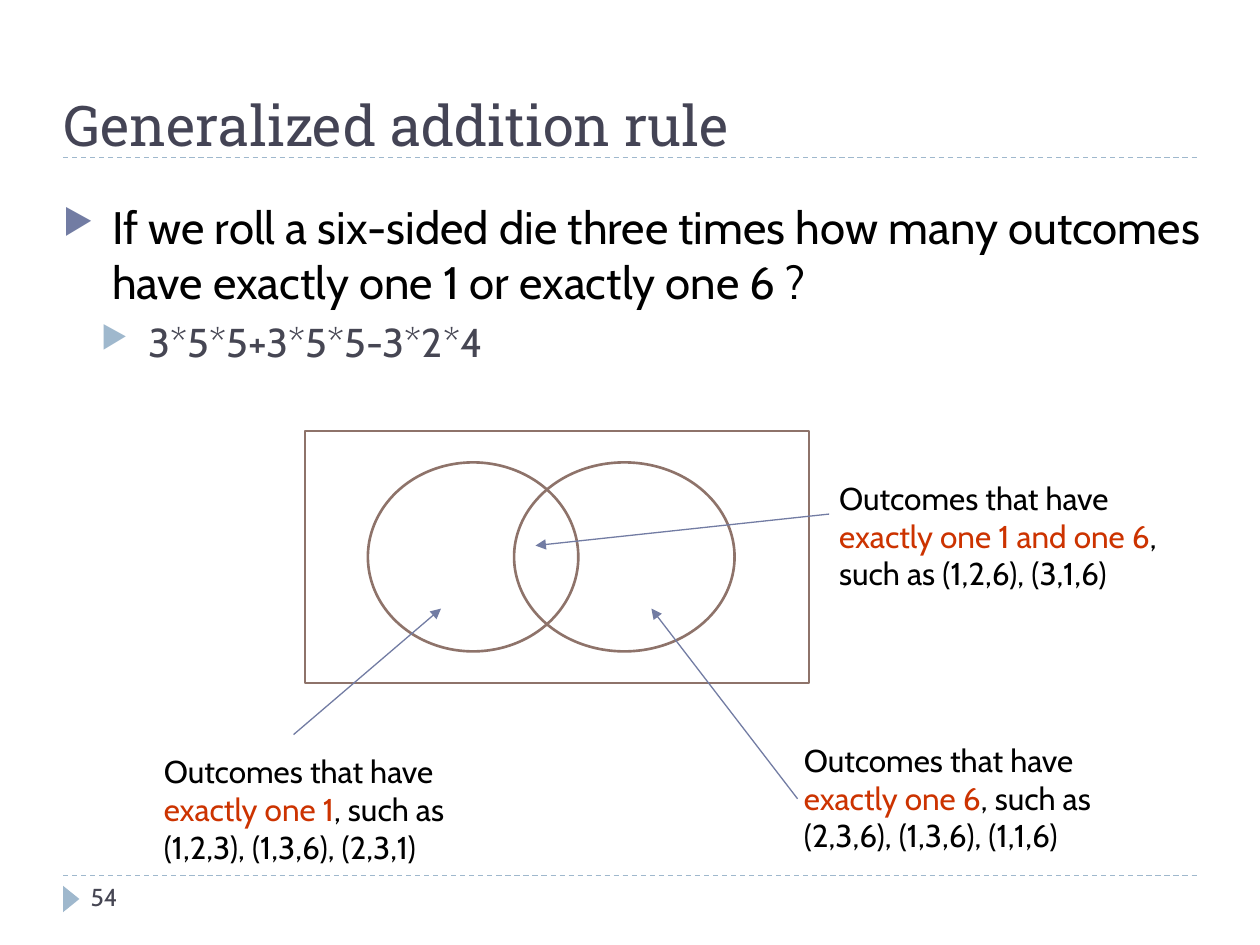
from dataclasses import dataclass

from lxml.etree import SubElement
from pptx import Presentation
from pptx.dml.color import RGBColor
from pptx.enum.dml import MSO_LINE
from pptx.enum.shapes import MSO_CONNECTOR, MSO_SHAPE
from pptx.enum.text import MSO_ANCHOR, MSO_AUTO_SIZE, PP_ALIGN
from pptx.oxml.ns import qn
from pptx.util import Inches, Pt


@dataclass(frozen=True)
class Theme:
    head: str = "Roboto Slab"
    body: str = "Cabin"
    title: str = "444455"
    ink: str = "000000"
    soft: str = "464653"
    blue: str = "727CA3"
    pale: str = "9FB8CD"
    brown: str = "8E736A"
    red: str = "CC3300"
    white: str = "FFFFFF"
    title_size: int = 32
    main_size: int = 26
    sub_size: int = 23
    note_size: int = 18
    page_size: int = 14
    thin: float = 0.75
    thick: float = 1.5


THEME = Theme()


def color(code):
    return RGBColor.from_string(code)


def style(run, size, code, face=THEME.body):
    run.font.size = Pt(size)
    run.font.name = face
    run.font.color.rgb = color(code)


def inset(frame, gap):
    frame.margin_left = frame.margin_right = Inches(gap)
    frame.margin_top = frame.margin_bottom = Inches(gap)


def add_text(slide, box, gap, wrap=True):
    shape = slide.shapes.add_textbox(*map(Inches, box))
    frame = shape.text_frame
    frame.word_wrap = wrap
    frame.auto_size = MSO_AUTO_SIZE.NONE
    inset(frame, gap)
    return shape


def add_line(slide, start, end, code):
    line = slide.shapes.add_connector(
        MSO_CONNECTOR.STRAIGHT, *map(Inches, (*start, *end)))
    line.line.color.rgb = color(code)
    line.line.width = Pt(THEME.thin)
    SubElement(line._element.spPr, qn("a:effectLst"))
    return line


def add_rule(slide, left, top, width):
    rule = add_line(slide, (left, top), (left + width, top), THEME.pale)
    rule.line.dash_style = MSO_LINE.DASH


def add_arrow(slide, start, end):
    arrow = add_line(slide, start, end, THEME.blue)
    SubElement(arrow.line._get_or_add_ln(), qn("a:tailEnd"), type="triangle")
    return arrow


def add_shape(slide, kind, box, fill=None, line=None):
    shape = slide.shapes.add_shape(kind, *map(Inches, box))
    shape.shadow.inherit = False
    if fill:
        shape.fill.solid()
        shape.fill.fore_color.rgb = color(fill)
    else:
        shape.fill.background()
    if line:
        shape.line.color.rgb = color(line)
        shape.line.width = Pt(THEME.thick)
    else:
        shape.line.fill.background()
    return shape


def add_title(slide, box, text):
    left, top, width, height = box
    add_rule(slide, left, top + height, width)
    title = slide.shapes.title
    title.left, title.top, title.width, title.height = map(Inches, box)
    frame = title.text_frame
    frame.text = text
    frame.vertical_anchor = MSO_ANCHOR.BOTTOM
    frame.auto_size = MSO_AUTO_SIZE.NONE
    inset(frame, 0)
    line = frame.paragraphs[0]
    line.alignment = PP_ALIGN.LEFT
    style(line.runs[0], THEME.title_size, THEME.title, THEME.head)


def add_bullet(line, indent, hang, code):
    props = line._p.get_or_add_pPr()
    props.set("marL", str(Inches(indent)))
    props.set("indent", str(-Inches(hang)))
    tint = SubElement(props, qn("a:buClr"))
    SubElement(tint, qn("a:srgbClr"), val=code)
    SubElement(props, qn("a:buSzPct"), val="76000")
    SubElement(props, qn("a:buChar"), char="▶")


def add_body(slide, box, main, sub):
    frame = add_text(slide, box, 0).text_frame
    frame.text = f"{main}\n{sub}"
    looks = (
        (0.39, 0.39, THEME.blue, 6, THEME.main_size, THEME.ink),
        (0.68, 0.38, THEME.pale, 5, THEME.sub_size, THEME.soft),
    )
    for level, (line, look) in enumerate(zip(frame.paragraphs, looks)):
        indent, hang, mark, space, size, ink = look
        line.level = level
        line.space_before = Pt(space)
        add_bullet(line, indent, hang, mark)
        style(line.runs[0], size, ink)


def add_venn(slide, box):
    left, top, width, height = box
    add_shape(slide, MSO_SHAPE.RECTANGLE, box, THEME.white, THEME.brown)
    tall = height - 0.5
    for shift, wide, fill in ((0.5, 1.67, THEME.white), (1.66, 1.75, None)):
        add_shape(slide, MSO_SHAPE.OVAL,
                  (left + shift, top + 0.25, wide, tall), fill, THEME.brown)


def add_note(slide, box, lines):
    note = add_text(slide, box, 0.05, wrap=False)
    frame = note.text_frame
    for index, parts in enumerate(lines):
        line = frame.paragraphs[0] if index == 0 else frame.add_paragraph()
        for text, ink in parts:
            run = line.add_run()
            run.text = text
            style(run, THEME.note_size, ink)
    return note


def add_notes(slide, left, top):
    ink, red = THEME.ink, THEME.red
    lead = [("Outcomes that have", ink)]
    notes = (
        ((-1.17, 2.5, 2.66), (-0.09, 2.41), (1.08, 1.41),
         [("exactly one 1", red), (", such as", ink)],
         "(1,2,3), (1,3,6), (2,3,1)", False),
        ((3.91, 2.41, 2.73), (3.91, 2.92), (2.75, 1.41),
         [("exactly one 6", red), (", such as", ink)],
         "(2,3,6), (1,3,6), (1,1,6)", True),
        ((4.19, 0.33, 2.98), (4.16, 0.66), (1.83, 0.91),
         [("exactly one 1 and one 6", red), (",", ink)],
         "such as (1,2,6), (3,1,6)", False),
    )
    for (x, y, width), start, end, key, tail, joined in notes:
        note = add_note(slide, (left + x, top + y, width, 1.02),
                        (lead, key, [(tail, ink)]))
        arrow = add_arrow(slide, (left + start[0], top + start[1]),
                          (left + end[0], top + end[1]))
        if joined:
            arrow.begin_connect(note, 1)


def add_foot(slide, left, top, width, page):
    add_rule(slide, left, top, width)
    mark = add_shape(slide, MSO_SHAPE.ISOSCELES_TRIANGLE,
                     (left - 0.04, top + 0.12, 0.21, 0.13), THEME.pale)
    mark.rotation = 90
    frame = add_text(slide, (left + 0.17, top, 2.17, 0.34), 0.05).text_frame
    frame.text = page
    style(frame.paragraphs[0].runs[0], THEME.page_size, THEME.soft)


def main():
    deck = Presentation()
    deck.slide_width, deck.slide_height = Inches(10), Inches(7.5)
    slide = deck.slides.add_slide(deck.slide_layouts[5])
    add_title(slide, (0.5, 0.17, 9, 1.08), "Generalized addition rule")
    add_body(slide, (0.5, 1.58, 9.27, 5.25),
             "If we roll a six-sided die three times how many outcomes "
             "have exactly one 1 or exactly one 6 ?",
             "3*5*5+3*5*5-3*2*4")
    add_venn(slide, (2.42, 3.42, 4, 2))
    add_notes(slide, 2.42, 3.42)
    add_foot(slide, 0.5, 6.95, 9, "54")
    deck.save("out.pptx")


if __name__ == "__main__":
    main()
